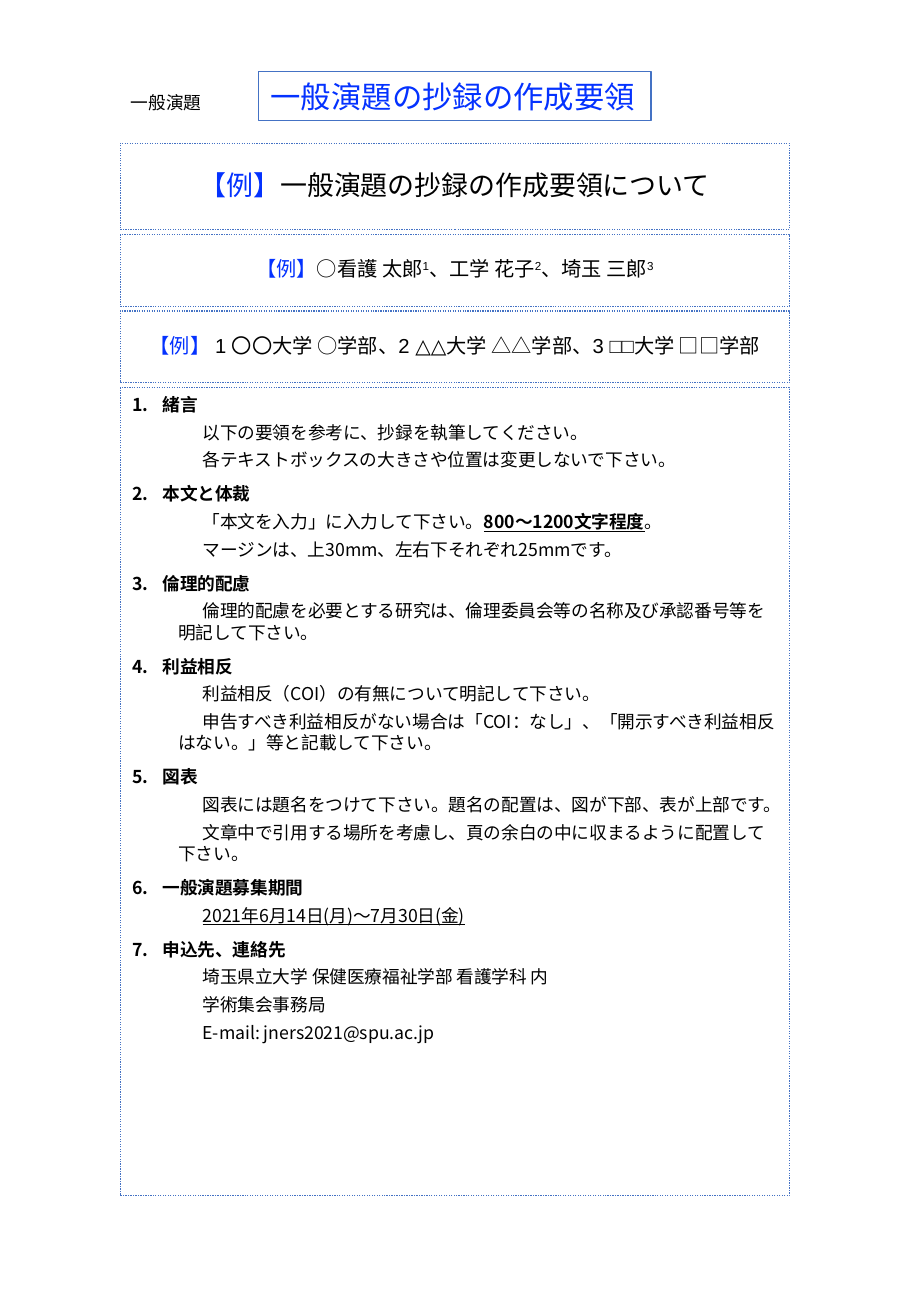
from pptx import Presentation
from pptx.dml.color import RGBColor
from pptx.enum.dml import MSO_LINE
from pptx.enum.text import MSO_ANCHOR, MSO_AUTO_SIZE, PP_ALIGN
from pptx.oxml.xmlchemy import OxmlElement
from pptx.util import Inches, Pt

BLACK, BLUE, BORDER = "000000", "0432FF", "4472C4"
GOTHIC = "Noto Sans CJK JP"
LEFT, WIDTH = 0.99, 5.51

presentation = Presentation()
presentation.slide_width = Inches(7.5)
presentation.slide_height = Inches(10.83)
slide = presentation.slides.add_slide(presentation.slide_layouts[6])


def add_box(left, top, width, height, dash=None, framed=True, wrap=True,
            anchor=MSO_ANCHOR.TOP):
    shape = slide.shapes.add_textbox(*map(Inches, (left, top, width, height)))
    if framed:
        shape.line.color.rgb = RGBColor.from_string(BORDER)
        shape.line.width = Pt(0.75)
        if dash:
            shape.line.dash_style = dash
    frame = shape.text_frame
    frame.word_wrap = wrap
    frame.auto_size = MSO_AUTO_SIZE.NONE if wrap else MSO_AUTO_SIZE.SHAPE_TO_FIT_TEXT
    frame.vertical_anchor = anchor
    return frame


def add_run(paragraph, text, size, name, color=BLACK, raised=False, **format_values):
    """Add a run whose Latin and East Asian fonts are both set."""
    run = paragraph.add_run()
    run.text = text
    run.font.color.rgb = RGBColor.from_string(color)
    for attribute, value in {"size": Pt(size), "name": name, **format_values}.items():
        setattr(run.font, attribute, value)
    properties = run.font._element
    east_asian = OxmlElement("a:ea")
    east_asian.set("typeface", GOTHIC)
    properties.find("{*}latin").addnext(east_asian)
    if raised:
        properties.set("baseline", "30000")


# Page heading
category = add_box(0.98, 0.71, 0.82, 0.29, framed=False, wrap=False)
add_run(category.paragraphs[0], "一般演題", 10.5, "Calibri")
heading = add_box(2.13, 0.59, 3.23, 0.4, wrap=False)
add_run(heading.paragraphs[0], "一般演題の抄録の作成要領", 18, "Calibri", BLUE)

# Title, authors and affiliations: (top, height, size, font, runs)
EXAMPLES = [
    (1.18, 0.71, 16, GOTHIC, ["【例】", "一般演題の抄録の作成要領について"]),
    (1.93, 0.59, 12, "Arial", ["【例】", "○看護 太郎", "1", "、工学 花子", "2",
                               "、埼玉 三郎", "3"]),
    (2.56, 0.59, 12, "Arial", ["【例】 ", "1 〇〇大学 ○学部、2 △△大学 △△学部、"
                               "3 □□大学 □□学部"]),
]
for top, height, size, name, texts in EXAMPLES:
    frame = add_box(LEFT, top, WIDTH, height, MSO_LINE.ROUND_DOT,
                    anchor=MSO_ANCHOR.MIDDLE)
    paragraph = frame.paragraphs[0]
    paragraph.alignment = PP_ALIGN.CENTER
    paragraph.line_spacing = 0.9
    for text in texts:
        add_run(paragraph, text, size, name, BLUE if text.startswith("【") else BLACK,
                raised=text.isdigit())

# Numbered sections; each line is a list of (text, emphasis) runs
PLAIN = {"bold": False}
UNDERLINED = {"bold": False, "underline": True}
STRONG = {"bold": True, "underline": True}
SECTIONS = [
    ("緒言", [
        [("以下の要領を参考に、抄録を執筆してください。", PLAIN)],
        [("各テキストボックスの大きさや位置は変更しないで下さい。", PLAIN)]]),
    ("本文と体裁", [
        [("「本文を入力」に入力して下さい。", PLAIN), ("800〜1200文字程度", STRONG),
         ("。", PLAIN)],
        [("マージンは、上30mm、左右下それぞれ25mmです。", PLAIN)]]),
    ("倫理的配慮", [
        [("倫理的配慮を必要とする研究は、倫理委員会等の名称及び承認番号等を"
          "明記して下さい。", PLAIN)]]),
    ("利益相反", [
        [("利益相反（COI）の有無について明記して下さい。", PLAIN)],
        [("申告すべき利益相反がない場合は「COI：なし」、「開示すべき利益相反はない。」"
          "等と記載して下さい。", PLAIN)]]),
    ("図表", [
        [("図表には題名をつけて下さい。題名の配置は、図が下部、表が上部です。", PLAIN)],
        [("文章中で引用する場所を考慮し、頁の余白の中に収まるように配置して下さい。",
          PLAIN)]]),
    ("一般演題募集期間", [
        [("2021年6月14日(月)〜7月30日(金)", UNDERLINED)]]),
    ("申込先、連絡先", [
        [("埼玉県立大学 保健医療福祉学部 看護学科 内", PLAIN)],
        [("学術集会事務局", PLAIN)],
        [("E-mail: jners2021@spu.ac.jp", PLAIN)]]),
]
body = add_box(LEFT, 3.19, WIDTH, 6.65, MSO_LINE.ROUND_DOT)
for number, (title, lines) in enumerate(SECTIONS, 1):
    for level, runs in enumerate([[(title, {"bold": True})], *lines]):
        is_title = level == 0
        is_first = is_title and number == 1
        paragraph = body.paragraphs[0] if is_first else body.add_paragraph()
        paragraph.level = 0 if is_title else 1
        paragraph.line_spacing = Pt(12.6)
        paragraph.space_before = Pt(0 if is_first else 7.5 if is_title else 3.8)
        margin, indent = (0.25, -0.25) if is_title else (0.38, 0.2)
        properties = paragraph._p.get_or_add_pPr()
        properties.set("marL", str(Inches(margin)))
        properties.set("indent", str(Inches(indent)))
        bullet = OxmlElement("a:buAutoNum" if is_title else "a:buNone")
        if is_title:
            bullet.set("type", "arabicPeriod")
            bullet.set("startAt", str(number))
        properties.append(bullet)
        for text, emphasis in runs:
            add_run(paragraph, text, 10.5, GOTHIC, **emphasis)

presentation.save("out.pptx")
